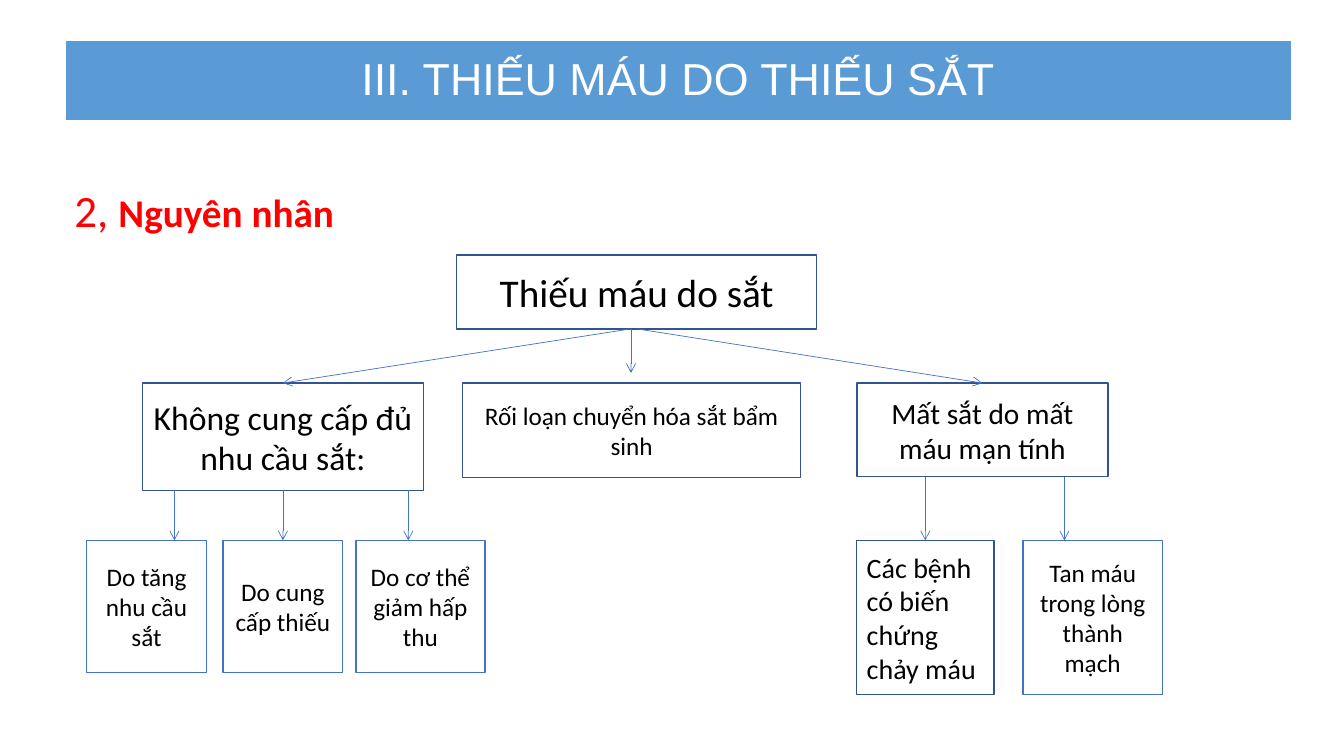
from dataclasses import dataclass

from lxml import etree
from pptx import Presentation
from pptx.dml.color import RGBColor
from pptx.enum.shapes import MSO_CONNECTOR, MSO_SHAPE
from pptx.enum.text import MSO_ANCHOR, PP_ALIGN
from pptx.oxml.ns import qn
from pptx.util import Inches, Pt

RECT = MSO_SHAPE.RECTANGLE
STRAIGHT = MSO_CONNECTOR.STRAIGHT
MIDDLE = MSO_ANCHOR.MIDDLE
LEFT, CENTER = PP_ALIGN.LEFT, PP_ALIGN.CENTER
TOP_SITE, BOTTOM_SITE = 0, 2

SLIDE_W, SLIDE_H = Inches(13.33), Inches(7.5)
COLUMN, ROW = SLIDE_W / 100, SLIDE_H / 100

# Rows of the diagram
ROOT_TOP, ROOT_BOTTOM = 33.73, 43.5
CAUSE_TOP = 50.67
LEAF_TOP = 71.47


@dataclass(frozen=True)
class Theme:
    banner: str = "5B9BD5"
    white: str = "FFFFFF"
    heading: str = "FF0000"
    ink: str = "000000"
    dark_line: str = "325491"
    light_line: str = "4472C4"
    title_font: str = "Arial"
    body_font: str = "Calibri"
    title: int = 32
    root: int = 28
    supply: int = 24
    loss: int = 21
    bleeding: int = 20
    small: int = 18
    box_line: float = 1
    banner_line: float = 1.5
    arrow_line: float = 0.5


THEME = Theme()


def col(count):
    return round(count * COLUMN)


def row(count):
    return round(count * ROW)


def grid(left, top, width, height):
    return col(left), row(top), col(width), row(height)


def write(paragraph, text, size=THEME.small, color=THEME.ink,
          font=THEME.body_font, bold=False, align=LEFT, spacing=None):
    paragraph.alignment = align
    if spacing:
        paragraph.line_spacing = spacing
    run = paragraph.add_run()
    run.text = text
    run.font.size = Pt(size)
    run.font.name = font
    run.font.bold = bold
    run.font.color.rgb = RGBColor.from_string(color)


def add_box(slide, area, text, fill=THEME.white, line=THEME.dark_line,
            weight=THEME.box_line, align=CENTER, **text_format):
    box = slide.shapes.add_shape(RECT, *grid(*area))
    box.shadow.inherit = False
    box.fill.solid()
    box.fill.fore_color.rgb = RGBColor.from_string(fill)
    box.line.color.rgb = RGBColor.from_string(line)
    box.line.width = Pt(weight)
    frame = box.text_frame
    frame.word_wrap = True
    frame.vertical_anchor = MIDDLE
    write(frame.paragraphs[0], text, align=align, **text_format)
    return box


def add_arrow(slide, start, end, source=None, target=None):
    """Draw from start to end (column, row); join source's bottom and target's top if given."""
    arrow = slide.shapes.add_connector(
        STRAIGHT, col(start[0]), row(start[1]), col(end[0]), row(end[1]))
    if source is not None:
        arrow.begin_connect(source, BOTTOM_SITE)
    if target is not None:
        arrow.end_connect(target, TOP_SITE)
    arrow.line.color.rgb = RGBColor.from_string(THEME.light_line)
    arrow.line.width = Pt(THEME.arrow_line)
    etree.SubElement(arrow.line._get_or_add_ln(), qn("a:tailEnd"), type="arrow")
    etree.SubElement(arrow._element.spPr, qn("a:effectLst"))


def add_heading(slide):
    heading = slide.shapes.add_textbox(*grid(4.8, 23.47, 25.35, 8.53))
    heading.text_frame.word_wrap = True
    paragraph = heading.text_frame.paragraphs[0]
    write(paragraph, "2, ", size=THEME.title, color=THEME.heading)
    write(paragraph, "Nguyên nhân", size=THEME.root, color=THEME.heading, bold=True)


def add_causes(slide):
    root = add_box(slide, (33.98, ROOT_TOP, 26.78, ROOT_BOTTOM - ROOT_TOP),
                   "Thiếu máu do sắt", size=THEME.root)
    supply = add_box(slide, (10.6, CAUSE_TOP, 20.9, 14.2),
                     "Không cung cấp đủ nhu cầu sắt:", size=THEME.supply)
    add_box(slide, (34.43, CAUSE_TOP, 25.13, 12.5),
            "Rối loạn chuyển hóa sắt bẩm sinh")
    loss = add_box(slide, (63.75, CAUSE_TOP, 18.68, 12.4),
                   "Mất sắt do mất máu mạn tính", size=THEME.loss)

    fork = (46.95, ROOT_BOTTOM)
    add_arrow(slide, fork, (21.05, CAUSE_TOP), target=supply)
    add_arrow(slide, fork, (46.95, 49.33))
    add_arrow(slide, fork, (73.09, CAUSE_TOP), source=root, target=loss)
    return supply, loss


def add_leaves(slide, supply):
    supply_bottom, loss_bottom = 64.87, 63.07
    supply_height, loss_height = 17.47, 20.4

    def supply_leaf(left, width, text):
        return add_box(slide, (left, LEAF_TOP, width, supply_height), text,
                       line=THEME.light_line)

    supply_leaf(6.45, 8.9, "Do tăng nhu cầu sắt")
    shortage = supply_leaf(16.6, 8.9, "Do cung cấp thiếu")
    supply_leaf(26.48, 9.6, "Do cơ thể giảm hấp thu")
    bleeding = add_box(slide, (63.75, LEAF_TOP, 10.2, loss_height),
                       "Các bệnh có biến chứng chảy máu",
                       size=THEME.bleeding, align=LEFT)
    add_box(slide, (76.13, LEAF_TOP, 10.35, loss_height),
            "Tan máu trong lòng thành mạch", line=THEME.light_line)

    drops = [
        (12.98, supply_bottom, None, None),
        (21.05, supply_bottom, supply, shortage),
        (30.38, supply_bottom, None, None),
        (68.85, loss_bottom, None, bleeding),
        (79.2, loss_bottom, None, None),
    ]
    for column, bottom, source, target in drops:
        add_arrow(slide, (column, bottom), (column, LEAF_TOP), source, target)


def main():
    deck = Presentation()
    deck.slide_width, deck.slide_height = SLIDE_W, SLIDE_H
    slide = deck.slides.add_slide(deck.slide_layouts[6])
    add_box(slide, (4.8, 5.33, 91.35, 10.67), "III. THIẾU MÁU DO THIẾU SẮT",
            fill=THEME.banner, line=THEME.white, weight=THEME.banner_line,
            size=THEME.title, color=THEME.white, font=THEME.title_font, spacing=0.9)
    add_heading(slide)
    supply, _ = add_causes(slide)
    add_leaves(slide, supply)
    deck.save("out.pptx")


if __name__ == "__main__":
    main()
